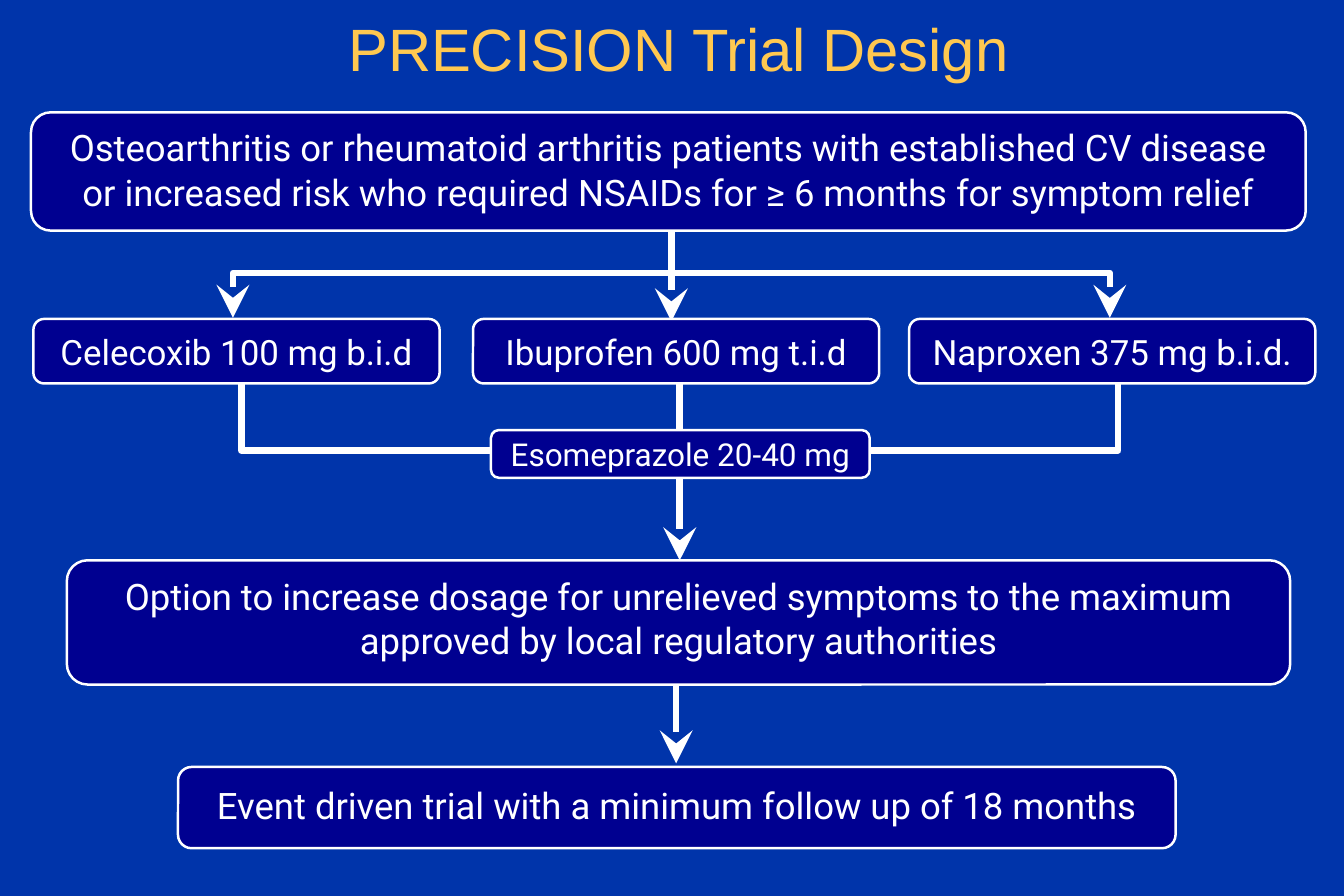
from dataclasses import dataclass

from lxml.etree import SubElement
from pptx import Presentation
from pptx.dml.color import RGBColor
from pptx.enum.shapes import MSO_CONNECTOR, MSO_SHAPE
from pptx.enum.text import MSO_ANCHOR, MSO_AUTO_SIZE, PP_ALIGN
from pptx.oxml import parse_xml
from pptx.oxml.ns import nsdecls, qn
from pptx.util import Inches, Pt


@dataclass(frozen=True)
class Theme:
    background = RGBColor.from_string("0034AA")
    panel = RGBColor.from_string("000090")
    white = RGBColor.from_string("FFFFFF")
    gold = RGBColor.from_string("FFC850")
    title_font = "Arial"
    body_font = "Roboto"
    title_size = Pt(36)
    criteria_size = Pt(22)
    drug_size = Pt(21)
    protector_size = Pt(19)
    outline = Pt(1.5)
    flow_line = Pt(4)


theme = Theme()


def write_text(frame, wording, size, font, color, insets):
    left, top, right, bottom = (Inches(inset) for inset in insets)
    frame_format = {
        "word_wrap": True,
        "auto_size": MSO_AUTO_SIZE.NONE,
        "vertical_anchor": MSO_ANCHOR.MIDDLE,
        "margin_left": left,
        "margin_top": top,
        "margin_right": right,
        "margin_bottom": bottom,
    }
    for name, value in frame_format.items():
        setattr(frame, name, value)
    frame.text = wording
    paragraph = frame.paragraphs[0]
    paragraph.alignment = PP_ALIGN.CENTER
    for run in paragraph.runs:
        for name, value in {"size": size, "name": font, "bold": False}.items():
            setattr(run.font, name, value)
        run.font.color.rgb = color
    return paragraph


def add_flow(start, end, arrow):
    """Join two points; an elbow leaves and arrives vertically."""
    (x1, y1), (x2, y2) = start, end
    bent = x1 != x2
    kind = MSO_CONNECTOR.ELBOW if bent else MSO_CONNECTOR.STRAIGHT
    if bent:
        # Lay the elbow on its side, then turn it a quarter about its centre
        mid_x, mid_y = (x1 + x2) / 2, (y1 + y2) / 2
        half_x, half_y = (x2 - x1) / 2, (y2 - y1) / 2
        x1, y1 = mid_x - half_y, mid_y + half_x
        x2, y2 = mid_x + half_y, mid_y - half_x
    flow = slide.shapes.add_connector(
        kind, Inches(x1), Inches(y1), Inches(x2), Inches(y2))
    properties = flow._element.spPr
    if bent:
        properties.find(qn("a:xfrm")).set("rot", "5400000")
    flow.line.color.rgb = theme.white
    flow.line.width = theme.flow_line
    if arrow:
        SubElement(properties.find(qn("a:ln")), qn("a:tailEnd"),
                   type="stealth", w="lg", len="lg")
    SubElement(properties, qn("a:effectLst"))


# Slide and background
deck = Presentation()
deck.slide_width, deck.slide_height = Inches(11.25), Inches(7.5)
slide = deck.slides.add_slide(deck.slide_layouts[5])
slide.background.fill.solid()
slide.background.fill.fore_color.rgb = theme.background

# Title with its soft shadow
title = slide.shapes.title
title_place = {"left": 0.9, "top": 0.06, "width": 9.56, "height": 0.68}
for name, value in title_place.items():
    setattr(title, name, Inches(value))
heading = write_text(title.text_frame, "PRECISION Trial Design", theme.title_size,
                     theme.title_font, theme.gold, (0.1, 0.05, 0.1, 0.05))
heading.runs[0].font._element.find(qn("a:solidFill")).addnext(parse_xml(
    f'<a:effectLst {nsdecls("a")}><a:outerShdw blurRad="38100" dist="38100" dir="2700000">'
    '<a:srgbClr val="000000"><a:alpha val="60000"/></a:srgbClr>'
    '</a:outerShdw></a:effectLst>'))

# Flow lines: patients to drugs, drugs to protector, then down the trial
patients_x, protector_x, reach = 5.62, 5.69, 3.67
for side in (1, -1):
    add_flow((patients_x, 1.91), (patients_x + side * reach, 2.66), True)
    add_flow((protector_x, 4.34), (protector_x + side * reach, 3.2), False)
for x, top, bottom, arrow in (
    (patients_x, 2.23, 2.69, True),
    (protector_x, 3.19, 3.75, False),
    (protector_x, 4.08, 4.69, True),
    (5.66, 5.73, 6.39, True),
):
    add_flow((x, top), (x, bottom), arrow)

# Boxes: wording, left, top, width, height, text size, insets, line spacing
plain = (0.1, 0.05, 0.1, 0.05)
drug_top, drug_width, drug_height = 2.67, 3.4, 0.54
boxes = [
    ("Osteoarthritis or rheumatoid arthritis patients with established CV disease\v"
     "or increased risk who required NSAIDs for ≥ 6 months for symptom relief",
     0.26, 0.94, 10.67, 0.99, theme.criteria_size, (0.1, 0, 0.1, 0.05), Pt(27)),
    ("Esomeprazole 20-40 mg",
     4.11, 3.6, 3.17, 0.4, theme.protector_size, plain, None),
    ("Option to increase dosage for unrelieved symptoms to the maximum "
     "approved by local regulatory authorities",
     0.56, 4.69, 10.24, 1.04, theme.criteria_size, (0.1, 0, 0.1, 0.08), None),
    ("Event driven trial with a minimum follow up of 18 months",
     1.49, 6.42, 8.35, 0.68, theme.criteria_size, (0.2, 0, 0.2, 0.05), None),
]
for drug, left in (
    ("Celecoxib 100 mg b.i.d", 0.28),
    ("Ibuprofen 600 mg t.i.d", 3.96),
    ("Naproxen 375 mg b.i.d.", 7.61),
):
    boxes.append((drug, left, drug_top, drug_width, drug_height,
                  theme.drug_size, plain, None))

for wording, left, top, width, height, size, insets, spacing in boxes:
    step = slide.shapes.add_shape(
        MSO_SHAPE.ROUNDED_RECTANGLE,
        Inches(left), Inches(top), Inches(width), Inches(height))
    step.shadow.inherit = False
    step.fill.solid()
    step.fill.fore_color.rgb = theme.panel
    step.line.color.rgb = theme.white
    step.line.width = theme.outline
    paragraph = write_text(step.text_frame, wording, size,
                           theme.body_font, theme.white, insets)
    paragraph.line_spacing = spacing

deck.save("out.pptx")
